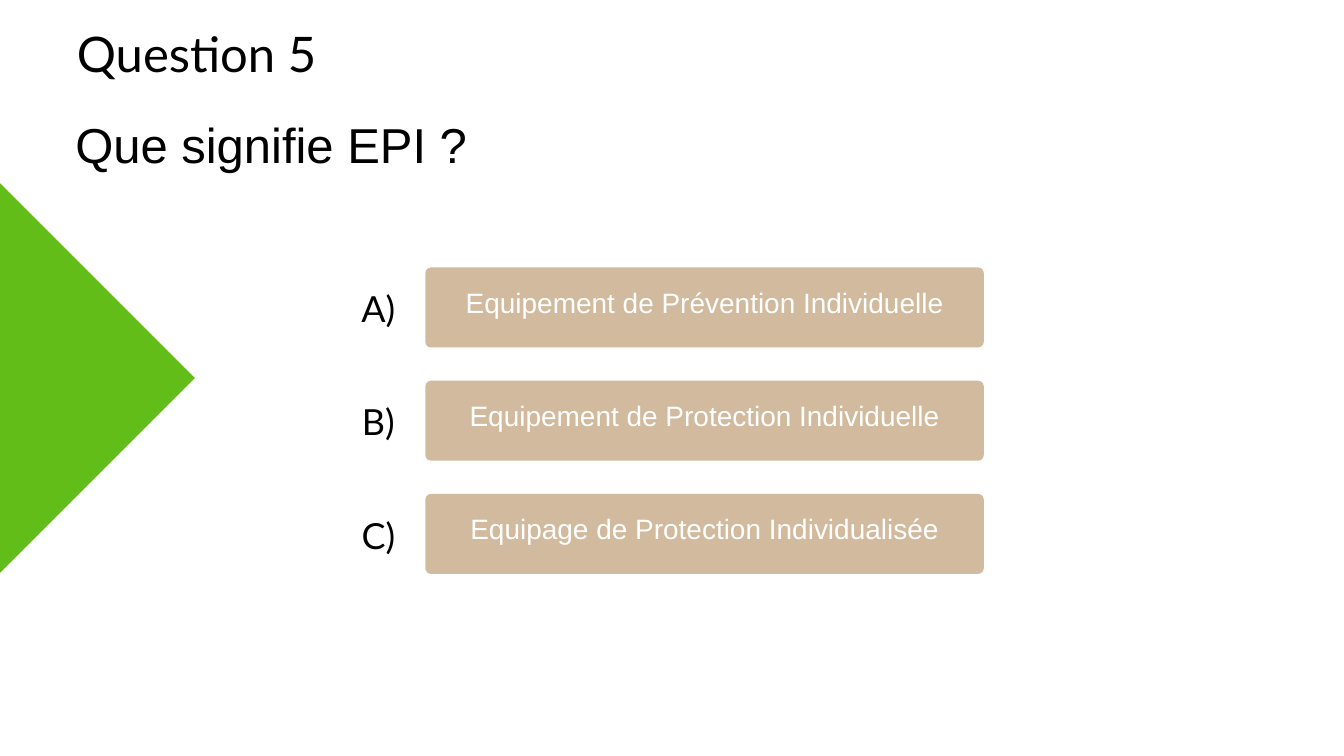
from pptx import Presentation
from pptx.dml.color import RGBColor
from pptx.enum import shapes, text
from pptx.util import Inches, Pt

TITLE = "Question 5"
QUERY = "Que signifie EPI ?"
ANSWERS = [
    ("A)", "Equipement de Prévention Individuelle"),
    ("B)", "Equipement de Protection Individuelle"),
    ("C)", "Equipage de Protection Individualisée"),
]

THEME = {
    "green": "62BD19",
    "tan": "D1BA9D",
    # style: font, size, line spacing, colour
    "title": ("Lato", 52.5, 73.5, "000000"),
    "query": ("Arial", 52.5, 57.2, "000000"),
    "letter": ("Lato", 38.5, 53.9, "000000"),
    "answer": ("Arial", 30, 32.7, "FFFFFF"),
}

LEFT, TOP, WIDTH, HEIGHT = 6.33, 3.98, 8.31, 1.19
STEP = 1.685
CENTER = text.PP_ALIGN.CENTER


def add_block(slide, kind, box, color):
    block = slide.shapes.add_shape(kind, *map(Inches, box))
    block.shadow.inherit = False
    block.fill.solid()
    block.fill.fore_color.rgb = RGBColor.from_string(THEME[color])
    block.line.fill.background()
    return block


def add_label(slide, words, box, style, align=CENTER):
    font, size, space, color = THEME[style]
    frame = slide.shapes.add_textbox(*map(Inches, box)).text_frame
    frame.word_wrap = True
    frame.margin_left = frame.margin_right = 0
    frame.margin_top = frame.margin_bottom = 0
    para = frame.paragraphs[0]
    para.text = words
    para.alignment = align
    para.line_spacing = Pt(space)
    para.font.name = font
    para.font.size = Pt(size)
    para.font.color.rgb = RGBColor.from_string(color)


def main():
    deck = Presentation()
    deck.slide_width, deck.slide_height = Inches(20), Inches(11.25)
    slide = deck.slides.add_slide(deck.slide_layouts[6])

    add_block(slide, shapes.MSO_SHAPE.DIAMOND, (-2.93, 2.71, 5.83, 5.83), "green")
    add_label(slide, TITLE, (1.12, 0.2, 3.61, 1.09), "title")
    add_label(slide, QUERY, (1.12, 1.79, 7.39, 0.92), "query", text.PP_ALIGN.LEFT)

    for row, (letter, answer) in enumerate(ANSWERS):
        top = TOP + row * STEP
        bar = add_block(slide, shapes.MSO_SHAPE.ROUNDED_RECTANGLE,
                        (LEFT, top, WIDTH, HEIGHT), "tan")
        bar.adjustments[0] = 0.07
        add_label(slide, letter, (5.35, top + 0.18, 0.56, 0.8), "letter")
        add_label(slide, answer, (LEFT, top + 0.31, WIDTH, 0.52), "answer")

    deck.save("out.pptx")


if __name__ == "__main__":
    main()
